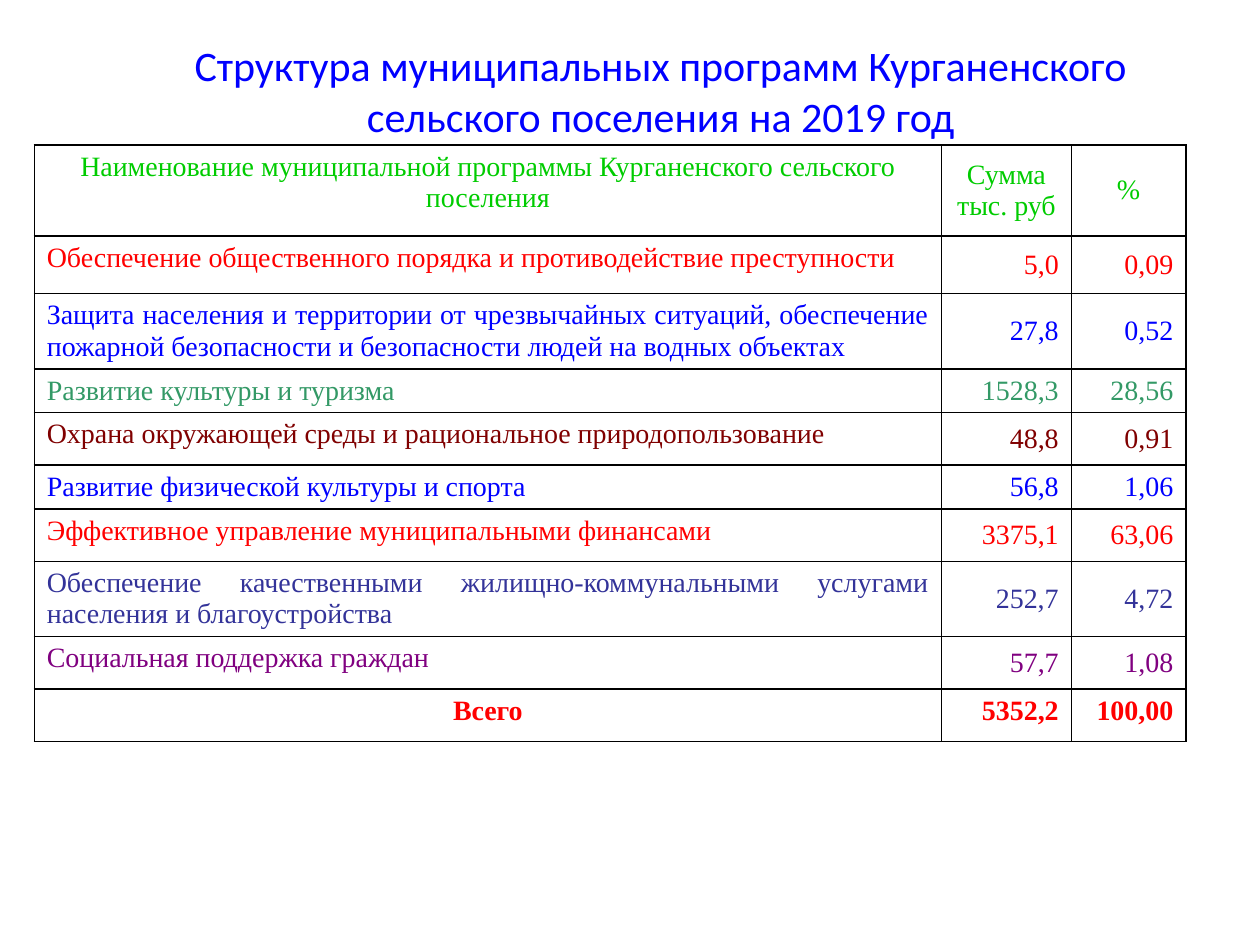
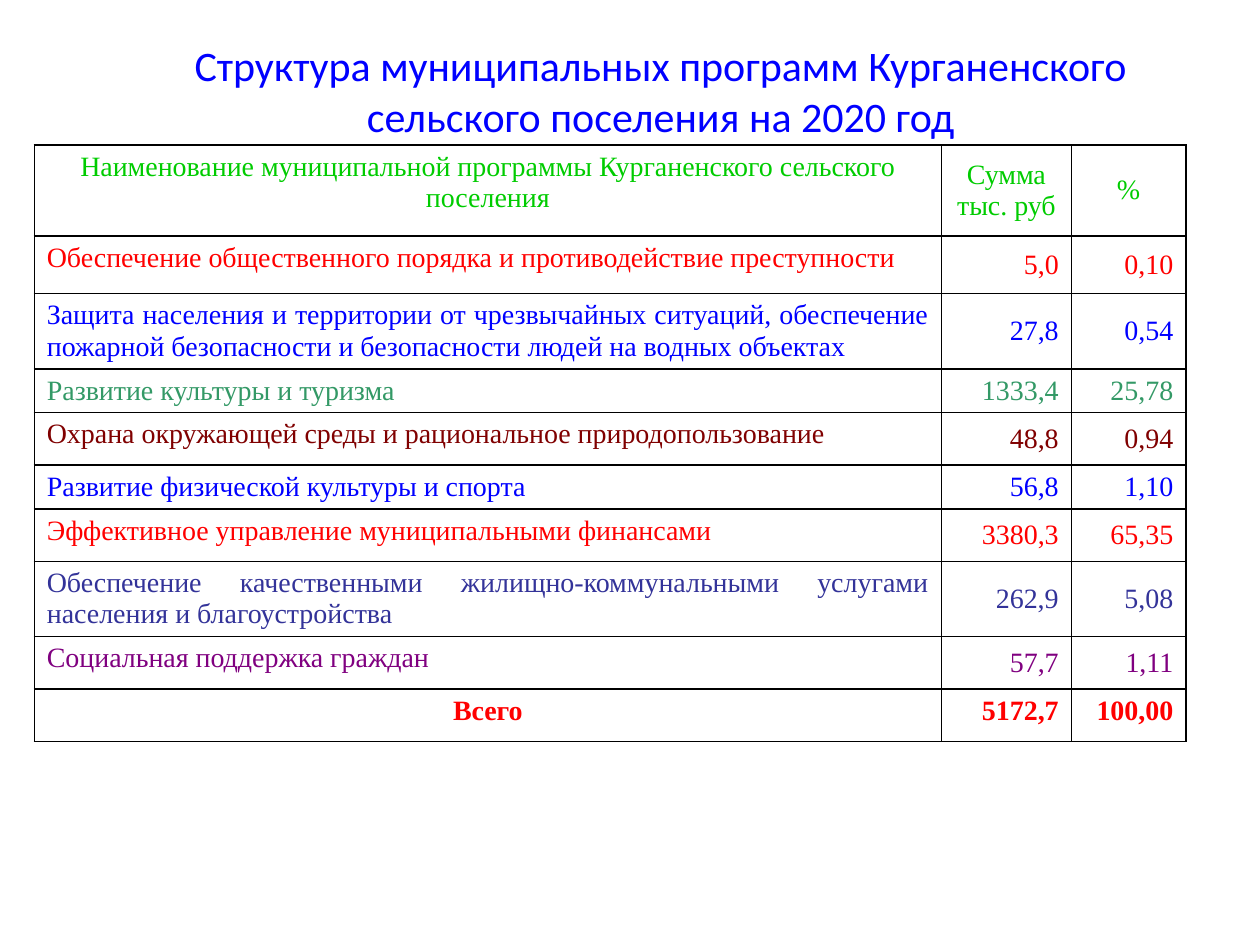
from lxml.etree import SubElement
from pptx import Presentation
from pptx.dml.color import RGBColor
from pptx.enum.text import MSO_ANCHOR as Anchor, MSO_AUTO_SIZE as AutoSize, PP_ALIGN as Align
from pptx.oxml.ns import qn
from pptx.util import Pt

# Shared style
BLUE, RED, GREEN = "0000FF", "FF0000", "00CC00"
TEAL, MAROON, INDIGO, PURPLE = "339966", "800000", "333399", "800080"
WHITE, BLACK = "FFFFFF", "000000"
TITLE_FONT, TABLE_FONT = "Calibri", "Times New Roman"
COLUMN_WIDTHS = [518.4, 74.2, 65.5]
ROW_HEIGHTS = [52, 33, 43, 25, 30, 25, 30, 43, 30, 30]

# Programmes, the same every year, each in its own colour
HEADER = ["Наименование муниципальной программы Курганенского сельского поселения",
          "Сумма тыс. руб", "%"]
PROGRAMMES = [
    ("Обеспечение общественного порядка и противодействие преступности", RED),
    ("Защита населения и территории от чрезвычайных ситуаций, обеспечение "
     "пожарной безопасности и безопасности людей на водных объектах", BLUE),
    ("Развитие культуры и туризма", TEAL),
    ("Охрана окружающей среды и рациональное природопользование", MAROON),
    ("Развитие физической культуры и спорта", BLUE),
    ("Эффективное управление муниципальными финансами", RED),
    ("Обеспечение качественными жилищно-коммунальными услугами "
     "населения и благоустройства", INDIGO),
    ("Социальная поддержка граждан", PURPLE),
    ("Всего", RED),
]

# Sum and share of each programme by year, the total last
BUDGETS = {
    2019: [("5,0", "0,09"), ("27,8", "0,52"), ("1528,3", "28,56"),
           ("48,8", "0,91"), ("56,8", "1,06"), ("3375,1", "63,06"),
           ("252,7", "4,72"), ("57,7", "1,08"), ("5352,2", "100,00")],
    2020: [("5,0", "0,10"), ("27,8", "0,54"), ("1333,4", "25,78"),
           ("48,8", "0,94"), ("56,8", "1,10"), ("3380,3", "65,35"),
           ("262,9", "5,08"), ("57,7", "1,11"), ("5172,7", "100,00")],
}


def set_font(paragraph, name, size, color, bold=False):
    font = paragraph.font
    font.name, font.size, font.bold = name, Pt(size), bold
    font.color.rgb = RGBColor.from_string(color)


def add_borders(cell):
    properties = cell._tc.get_or_add_tcPr()
    for position, side in enumerate(("lnL", "lnR", "lnT", "lnB")):
        line = properties.makeelement(qn(f"a:{side}"), {"w": str(Pt(1))})
        fill = SubElement(line, qn("a:solidFill"))
        SubElement(fill, qn("a:srgbClr"), val=BLACK)
        properties.insert(position, line)  # borders come before the fill


prs = Presentation()
prs.slide_width, prs.slide_height = Pt(720), Pt(540)
title_only = prs.slide_layouts[5]

for year, amounts in BUDGETS.items():
    slide = prs.slides.add_slide(title_only)

    # Title
    title = slide.shapes.title
    title.left, title.top, title.width, title.height = Pt(72), Pt(20), Pt(611), Pt(63)
    title.text = f"Структура муниципальных программ Курганенского сельского поселения на {year} год"
    title.text_frame.auto_size = AutoSize.NONE
    title.text_frame.vertical_anchor = Anchor.MIDDLE
    heading = title.text_frame.paragraphs[0]
    heading.alignment = Align.CENTER
    set_font(heading, TITLE_FONT, 24, BLUE)

    # Table grid
    budget = slide.shapes.add_table(
        len(ROW_HEIGHTS), len(COLUMN_WIDTHS), Pt(19.6), Pt(82.8),
        Pt(sum(COLUMN_WIDTHS)), Pt(sum(ROW_HEIGHTS))).table
    budget.first_row = budget.horz_banding = False
    for column, width in zip(budget.columns, COLUMN_WIDTHS):
        column.width = Pt(width)
    for row, height in zip(budget.rows, ROW_HEIGHTS):
        row.height = Pt(height)

    # Table content
    lines = [(HEADER, GREEN)]
    lines += [((name, *values), color) for (name, color), values in zip(PROGRAMMES, amounts)]
    total_row = len(lines) - 1
    for r, (texts, color) in enumerate(lines):
        for c, text in enumerate(texts):
            cell = budget.cell(r, c)
            cell.text = text
            cell.fill.solid()
            cell.fill.fore_color.rgb = RGBColor.from_string(WHITE)
            add_borders(cell)
            centred_vertically = c > 0 and r < total_row
            cell.vertical_anchor = Anchor.MIDDLE if centred_vertically else Anchor.TOP
            paragraph = cell.text_frame.paragraphs[0]
            if r == 0 or (r == total_row and c == 0):
                paragraph.alignment = Align.CENTER
            else:
                paragraph.alignment = Align.RIGHT if c else Align.JUSTIFY
            set_font(paragraph, TABLE_FONT, 16, color, bold=r == total_row)

prs.save("out.pptx")
